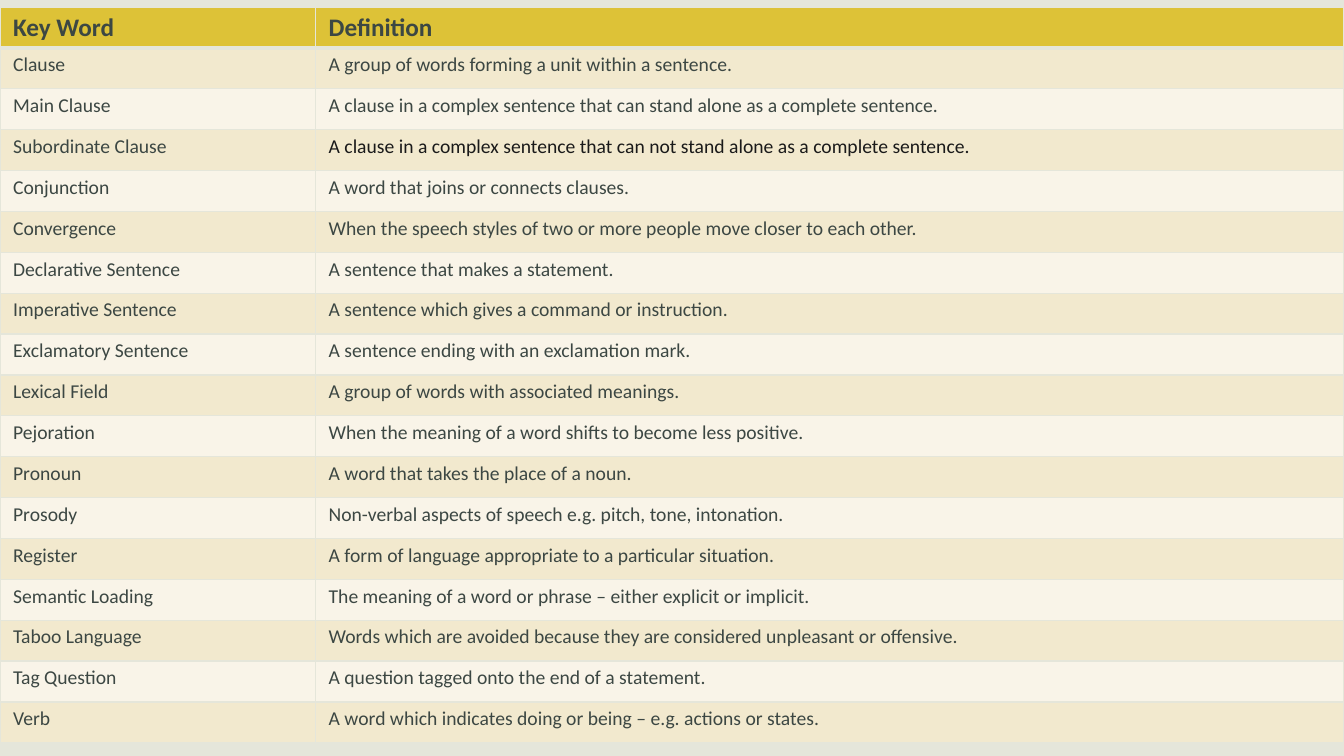
from lxml import etree
from pptx import Presentation
from pptx import util as u
from pptx.dml.color import RGBColor
from pptx.oxml import ns

COLOURS = {
    "page": "E5E6DA",
    "header": "DDC237",
    "odd": "F2E9CE",
    "even": "F9F4E8",
    "text": "3C4743",
    "dark": "1A1A1A",
}
COLUMN_WIDTHS = (3.13, 10.2)
GLOSSARY = [
    ("Key Word", "Definition"),
    ("Clause", "A group of words forming a unit within a sentence."),
    ("Main Clause", "A clause in a complex sentence that can stand alone as a complete sentence."),
    ("Subordinate Clause", "A clause in a complex sentence that can not stand alone as a complete sentence."),
    ("Conjunction", "A word that joins or connects clauses."),
    ("Convergence", "When the speech styles of two or more people move closer to each other."),
    ("Declarative Sentence", "A sentence that makes a statement."),
    ("Imperative Sentence", "A sentence which gives a command or instruction."),
    ("Exclamatory Sentence", "A sentence ending with an exclamation mark."),
    ("Lexical Field", "A group of words with associated meanings."),
    ("Pejoration", "When the meaning of a word shifts to become less positive."),
    ("Pronoun", "A word that takes the place of a noun."),
    ("Prosody", "Non-verbal aspects of speech e.g. pitch, tone, intonation."),
    ("Register", "A form of language appropriate to a particular situation."),
    ("Semantic Loading", "The meaning of a word or phrase – either explicit or implicit."),
    ("Taboo Language", "Words which are avoided because they are considered unpleasant or offensive."),
    ("Tag Question", "A question tagged onto the end of a statement."),
    ("Verb", "A word which indicates doing or being – e.g. actions or states."),
]
DARK_CELL = (3, 1)
HEADER_FONT = {"name": "Calibri", "size": u.Pt(18), "bold": True}
BODY_FONT = {"name": "Calibri", "size": u.Pt(14), "bold": False}
MARGINS = {
    "margin_left": u.Inches(0.13),
    "margin_top": u.Inches(0.05),
    "margin_right": u.Inches(0.13),
    "margin_bottom": u.Inches(0.05),
}


def colour(name):
    return RGBColor.from_string(COLOURS[name])


def set_values(target, values):
    for name, value in values.items():
        setattr(target, name, value)


def set_borders(cell, row):
    properties = cell._tc.get_or_add_tcPr()
    widths = {"lnL": 1, "lnR": 1, "lnT": 3 if row == 1 else 1, "lnB": 3 if row == 0 else 1}
    for side, width in widths.items():
        line = etree.SubElement(properties, ns.qn(f"a:{side}"), w=str(u.Pt(width)))
        fill = etree.SubElement(line, ns.qn("a:solidFill"))
        etree.SubElement(fill, ns.qn("a:srgbClr"), val=COLOURS["page"])


def format_cell(cell, row, column, wording):
    set_values(cell, MARGINS)
    set_borders(cell, row)
    cell.fill.solid()
    band = "header" if row == 0 else "odd" if row % 2 else "even"
    cell.fill.fore_color.rgb = colour(band)
    span = cell.text_frame.paragraphs[0].add_run()
    span.text = wording
    set_values(span.font, BODY_FONT if row else HEADER_FONT)
    span.font.color.rgb = colour("dark" if (row, column) == DARK_CELL else "text")


def add_glossary(page, left, top, width, height):
    table = page.shapes.add_table(len(GLOSSARY), len(COLUMN_WIDTHS), left, top, width, height).table
    for column, share in zip(table.columns, COLUMN_WIDTHS):
        column.width = int(width * share / sum(COLUMN_WIDTHS))
    for row, entry in enumerate(GLOSSARY):
        table.rows[row].height = height // len(GLOSSARY)
        for column, wording in enumerate(entry):
            format_cell(table.cell(row, column), row, column, wording)


def main():
    deck = Presentation()
    deck.slide_width, deck.slide_height = u.Inches(13.33), u.Inches(7.5)
    page = deck.slides.add_slide(deck.slide_layouts.get_by_name("Blank"))
    page.background.fill.solid()
    page.background.fill.fore_color.rgb = colour("page")
    add_glossary(page, u.Inches(0), u.Inches(0.07), deck.slide_width, u.Inches(7.3))
    deck.save("out.pptx")


if __name__ == "__main__":
    main()
